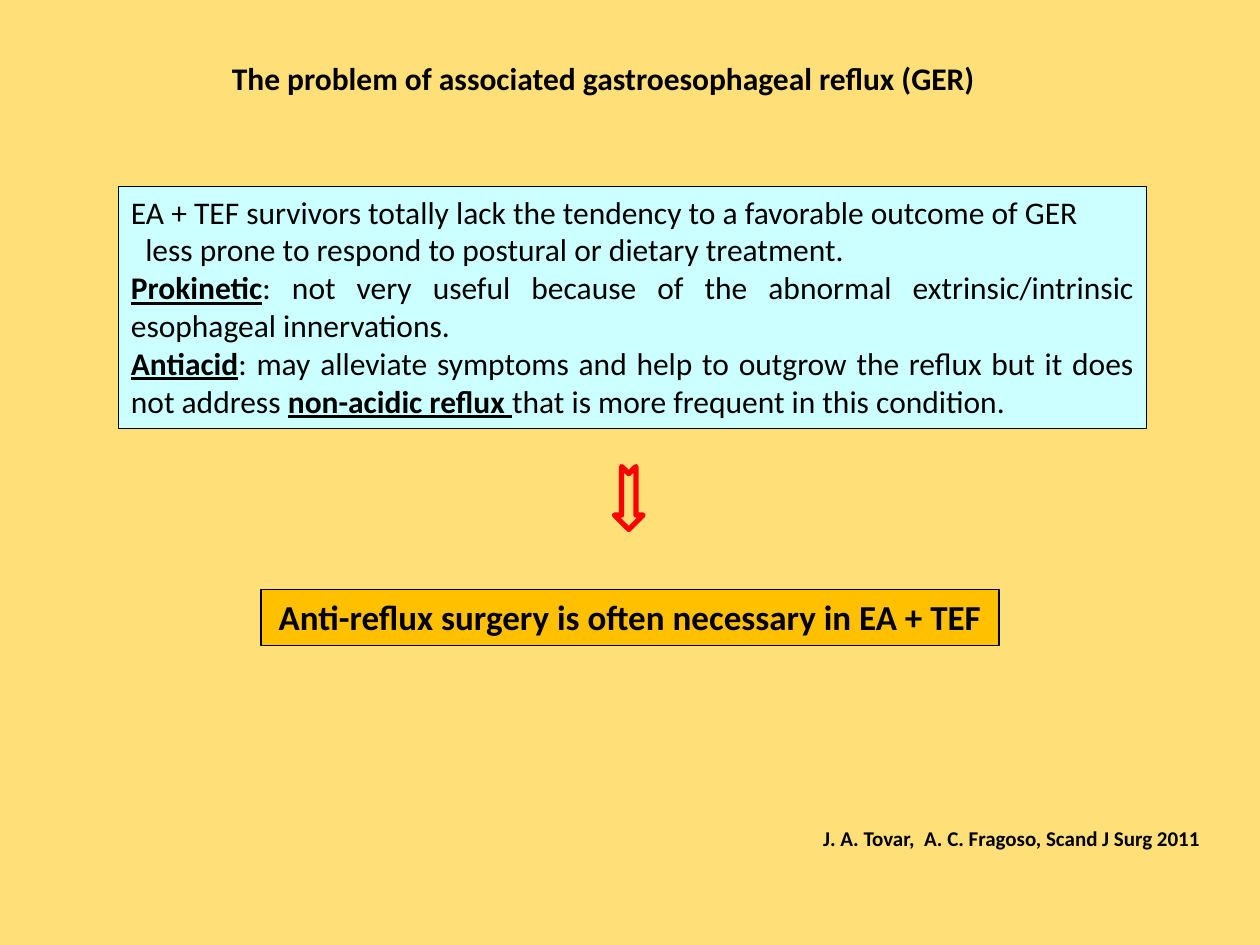
from pptx import Presentation
from pptx.dml.color import RGBColor
from pptx.enum.shapes import MSO_SHAPE
from pptx.enum.text import MSO_ANCHOR, MSO_AUTO_SIZE, PP_ALIGN
from pptx.util import Cm, Pt

COLORS = {
    "background": "FFDF77",
    "text": "000000",
    "border": "000000",
    "findings": "CCFFFF",
    "conclusion": "FFC000",
    "arrow": "FF0000",
}
FONT = "Calibri"
FINDINGS = [
    [("EA + TEF survivors totally lack the tendency to a favorable outcome of GER", False)],
    [("less prone to respond to postural or dietary treatment.", False)],
    [("Prokinetic", True),
     (": not very useful because of the abnormal extrinsic/intrinsic esophageal innervations.", False)],
    [("Antiacid", True),
     (": may alleviate symptoms and help to outgrow the reflux but it does not address ", False),
     ("non-acidic reflux ", True),
     ("that is more frequent in this condition.", False)],
]


def rgb(name):
    return RGBColor.from_string(COLORS[name])


def format_run(r, size, bold, underline=False):
    r.font.name = FONT
    r.font.size = Pt(size)
    r.font.bold = bold
    r.font.underline = underline
    r.font.color.rgb = rgb("text")


def set_line(tf, text, size, align):
    tf.text = text
    p = tf.paragraphs[0]
    p.alignment = align
    format_run(p.runs[0], size, True)


def set_frame(tf, wrap=True):
    tf.word_wrap = wrap
    tf.auto_size = MSO_AUTO_SIZE.NONE
    tf.vertical_anchor = MSO_ANCHOR.TOP


def add_panel(s, box, fill):
    sp = s.shapes.add_shape(MSO_SHAPE.RECTANGLE, *box)
    sp.shadow.inherit = False
    sp.fill.solid()
    sp.fill.fore_color.rgb = rgb(fill)
    sp.line.color.rgb = rgb("border")
    sp.line.width = Pt(0.75)
    set_frame(sp.text_frame)
    return sp.text_frame


def place_title(s, box):
    sp = s.shapes.title
    sp.left, sp.top, sp.width, sp.height = box
    set_frame(sp.text_frame)
    set_line(sp.text_frame, "The problem of associated gastroesophageal reflux (GER)",
             18, PP_ALIGN.LEFT)


def add_findings(s, box):
    tf = add_panel(s, box, "findings")
    for i, parts in enumerate(FINDINGS):
        p = tf.add_paragraph() if i else tf.paragraphs[0]
        p.alignment = PP_ALIGN.JUSTIFY
        for text, key in parts:
            r = p.add_run()
            r.text = text
            format_run(r, 18, key, key)
    tf.paragraphs[1]._p.get_or_add_pPr().set("marL", str(Cm(0.29)))


def add_arrow(s, box):
    sp = s.shapes.add_shape(MSO_SHAPE.NOTCHED_RIGHT_ARROW, *box)
    sp.shadow.inherit = False
    sp.rotation = 90
    sp.fill.background()
    sp.line.color.rgb = rgb("arrow")
    sp.line.width = Pt(3)


def add_conclusion(s, box):
    tf = add_panel(s, box, "conclusion")
    set_line(tf, "Anti-reflux surgery is often necessary in EA + TEF", 20, PP_ALIGN.CENTER)


def add_citation(s, box):
    tf = s.shapes.add_textbox(*box).text_frame
    set_frame(tf, wrap=False)
    set_line(tf, "J. A. Tovar,  A. C. Fragoso, Scand J Surg 2011", 12, PP_ALIGN.CENTER)


def main():
    prs = Presentation()
    prs.slide_width, prs.slide_height = Cm(25.4), Cm(19.05)
    s = prs.slides.add_slide(prs.slide_layouts[5])
    s.background.fill.solid()
    s.background.fill.fore_color.rgb = rgb("background")
    place_title(s, (Cm(4.42), Cm(1.07), Cm(16.81), Cm(1.02)))
    add_findings(s, (Cm(2.39), Cm(3.76), Cm(20.73), Cm(4.88)))
    add_arrow(s, (Cm(12.04), Cm(9.75), Cm(1.27), Cm(0.58)))
    add_conclusion(s, (Cm(5.26), Cm(11.89), Cm(14.88), Cm(1.12)))
    add_citation(s, (Cm(16.28), Cm(16.51), Cm(8.23), Cm(0.76)))
    prs.save("out.pptx")


if __name__ == "__main__":
    main()
